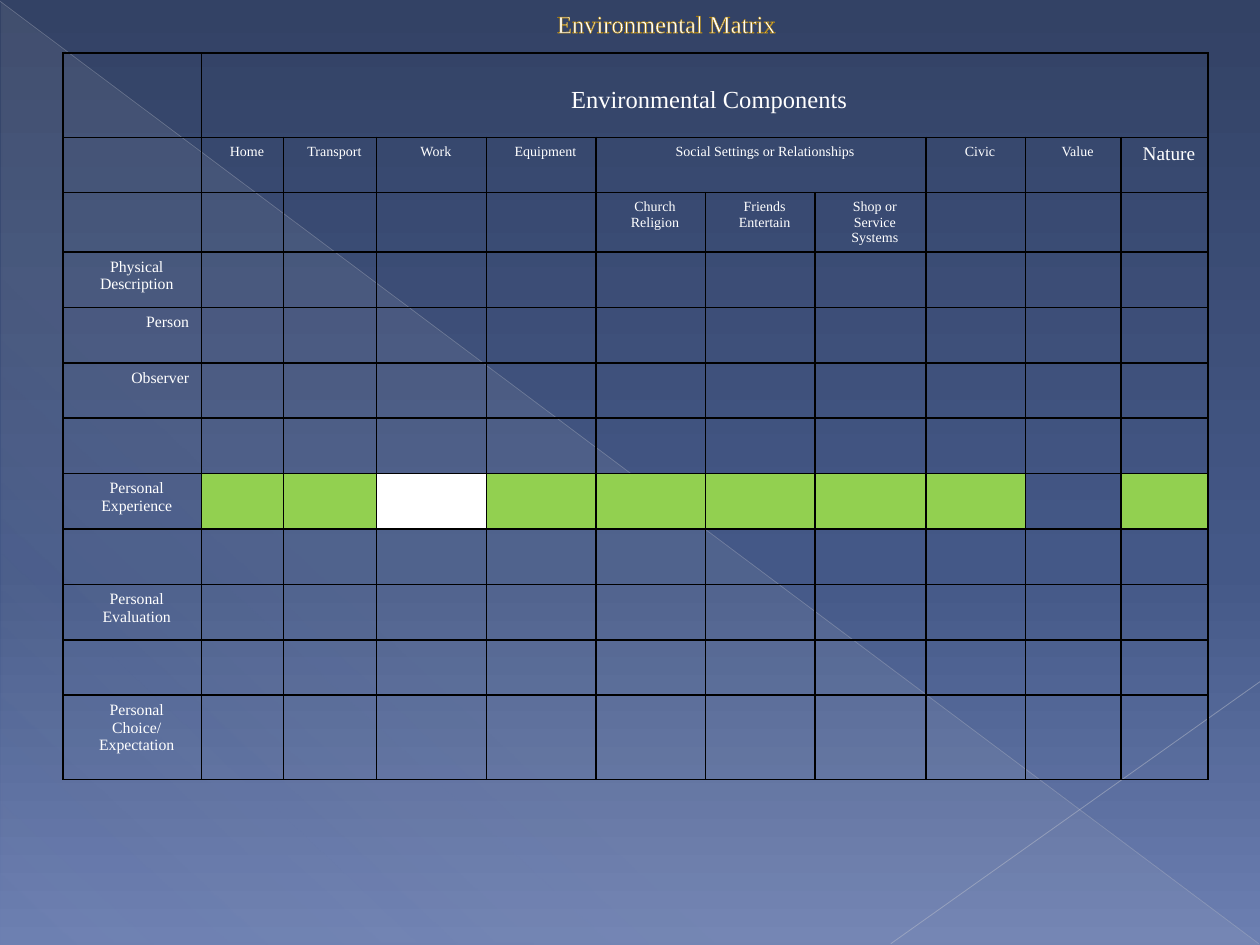
import pptx
import pptx.util
import pptx.dml.color
import pptx.enum.shapes
import pptx.enum.text
import pptx.oxml.ns
from lxml import etree

Inches, Pt = pptx.util.Inches, pptx.util.Pt
RGB = pptx.dml.color.RGBColor.from_string
qn = pptx.oxml.ns.qn
ALIGN = pptx.enum.text.PP_ALIGN

# Content
TITLE = "Environmental Matrix"
HEADING = "Environmental Components"
COMPONENTS = {1: "Home", 2: "Transport", 3: "Work", 4: "Equipment",
              5: "Social Settings or Relationships",
              8: "Civic", 9: "Value", 10: "Nature"}
SETTINGS = {5: "Church\nReligion", 6: "Friends\nEntertain",
            7: "Shop or\nService\nSystems"}
ROW_LABELS = {3: "Physical\nDescription", 4: "Person", 5: "Observer",
              7: "Personal\nExperience", 9: "Personal\nEvaluation",
              11: "Personal\nChoice/\nExpectation"}
RIGHT_ALIGNED = (4, 5)
EXPERIENCE_ROW = 7
EXPERIENCE_FILLS = {c: "green" for c in (1, 2, 4, 5, 6, 7, 8, 10)} | {3: "white"}
MERGES = [((0, 1), (0, 10)), ((1, 5), (1, 7))]

# Geometry in inches
COLS = [1.1, 0.65, 0.74] + [0.87] * 4 + [0.88, 0.79, 0.76, 0.69]
ROWS = [0.67, 0.44, 0.47] + [0.44] * 8 + [0.67]
LINES = [((0, 0.01), (9.99, 7.49), "line1", 0.39, 35),
         ((10, 5.41), (7.07, 7.49), "line2", 0.47, 45)]

THEME = {
    "font": "Times New Roman", "white": "FFFFFF", "black": "000000",
    "green": "92D050", "outline": "A67800", "line1": "B9BDC8", "line2": "C1C4CE",
    "bg": [(0, "334265", 100), (60, "445887", 100), (100, "6C7FB1", 100)],
    "triangle": [(0, "D4D4D6", 10), (70, "D4D4D6", 8), (100, "D4D4D6", 1)],
    "title": 14, "nature": 11, "label": 9, "component": 8,
}


def add(parent, tag, **attrs):
    return etree.SubElement(parent, qn(tag), {k: str(v) for k, v in attrs.items()})


def add_color(parent, color, alpha=100):
    clr = add(parent, "a:srgbClr", val=color)
    if alpha < 100:
        add(clr, "a:alpha", val=alpha * 1000)


def set_gradient(fill, root, stops, angle):
    fill.gradient()
    grad = next(root.iter(qn("a:gradFill")))
    for child in list(grad):
        grad.remove(child)
    gs_list = add(grad, "a:gsLst")
    for pos, color, alpha in stops:
        add_color(add(gs_list, "a:gs", pos=pos * 1000), color, alpha)
    add(grad, "a:lin", ang=angle * 60000, scaled=0)


def write(tf, text, size, align=ALIGN.CENTER, left=0.49, hang=0.42):
    """Write each line of text as a paragraph with a hanging indent."""
    for i, line in enumerate(text.split("\n")):
        p = tf.paragraphs[0] if i == 0 else tf.add_paragraph()
        p.alignment = align
        p_pr = p._p.get_or_add_pPr()
        p_pr.set("marL", str(Inches(left)))
        p_pr.set("indent", str(-Inches(hang)))
        add(p_pr, "a:buNone")
        r = p.add_run()
        r.text = line
        r.font.name, r.font.size = THEME["font"], Pt(size)
        r.font.bold = False
        r.font.color.rgb = RGB(THEME["white"])


def add_borders(cell):
    tc_pr = cell._tc.get_or_add_tcPr()
    for i, side in enumerate(("a:lnL", "a:lnR", "a:lnT", "a:lnB")):
        ln = add(tc_pr, side, w=Pt(1))
        add_color(add(ln, "a:solidFill"), THEME["black"])
        tc_pr.insert(i, ln)


prs = pptx.Presentation()
prs.slide_width, prs.slide_height = Inches(10), Inches(7.5)
s = prs.slides.add_slide(prs.slide_layouts[5])

# Background, pale triangle and thin lines
set_gradient(s.background.fill, s.element, THEME["bg"], 90)
sp = s.shapes.add_shape(pptx.enum.shapes.MSO_SHAPE.RIGHT_TRIANGLE,
                        Inches(0.01), Inches(0.02), Inches(9.99), Inches(7.48))
sp.shadow.inherit = False
sp.line.fill.background()
set_gradient(sp.fill, sp.element, THEME["triangle"], 133)

for start, end, color, width, alpha in LINES:
    cx = s.shapes.add_connector(pptx.enum.shapes.MSO_CONNECTOR.STRAIGHT,
                                *map(Inches, start + end))
    cx.line.width = Pt(width)
    cx.line.color.rgb = RGB(THEME[color])
    clr = next(cx.element.spPr.iter(qn("a:srgbClr")))
    add(clr, "a:alpha", val=alpha * 1000)
    add(cx.element.spPr, "a:effectLst")

# Matrix grid
table = s.shapes.add_table(len(ROWS), len(COLS), Inches(0.5), Inches(0.42),
                           Inches(sum(COLS)), Inches(sum(ROWS))).table
table.first_row = table.horz_banding = False
for col, width in zip(table.columns, COLS):
    col.width = Inches(width)
for row, height in zip(table.rows, ROWS):
    row.height = Inches(height)
for cell in table.iter_cells():
    cell.fill.background()
    add_borders(cell)
for first, last in MERGES:
    table.cell(*first).merge(table.cell(*last))
for c, color in EXPERIENCE_FILLS.items():
    fill = table.cell(EXPERIENCE_ROW, c).fill
    fill.solid()
    fill.fore_color.rgb = RGB(THEME[color])

# Matrix text
heading = table.cell(0, 1)
heading.margin_top = Inches(0.27)
write(heading.text_frame, HEADING, THEME["title"])
for c, text in COMPONENTS.items():
    size = THEME["nature" if text == "Nature" else "component"]
    write(table.cell(1, c).text_frame, text, size)
for c, text in SETTINGS.items():
    write(table.cell(2, c).text_frame, text, THEME["component"])
for r, text in ROW_LABELS.items():
    write(table.cell(r, 0).text_frame, text, THEME["label"],
          align=ALIGN.RIGHT if r in RIGHT_ALIGNED else ALIGN.CENTER)

# Title, in front of the triangle
title = s.shapes.title
title.left, title.top = Inches(1.33), Inches(-0.17)
title.width, title.height = Inches(7.92), Inches(0.71)
tf = title.text_frame
tf.vertical_anchor = pptx.enum.text.MSO_ANCHOR.MIDDLE
write(tf, TITLE, THEME["title"], left=0.53, hang=0.53)
r_pr = tf.paragraphs[0].runs[0].font._element
ln = add(r_pr, "a:ln", w=Pt(0.5))
add_color(add(ln, "a:solidFill"), THEME["outline"])
r_pr.insert(0, ln)
s.shapes._spTree.append(title.element)

prs.save("out.pptx")
